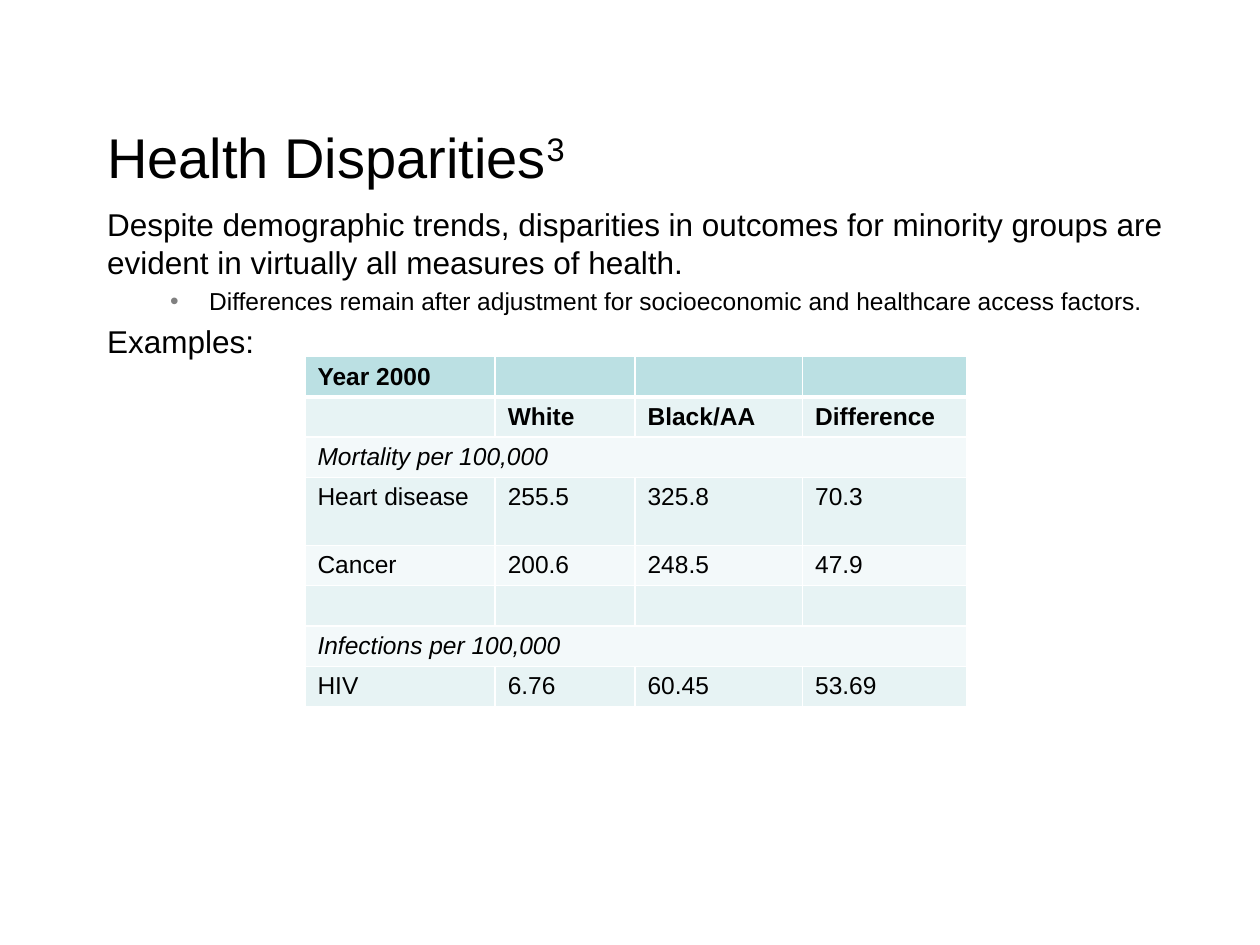
from lxml.etree import SubElement
from pptx import Presentation
from pptx.dml.color import RGBColor
from pptx.enum.text import MSO_ANCHOR as Anchor, PP_ALIGN as Align
from pptx.oxml.ns import qn
from pptx.util import Inches, Pt

BLACK = RGBColor(0x00, 0x00, 0x00)
GRAY = RGBColor(0x80, 0x80, 0x80)
WHITE = RGBColor(0xFF, 0xFF, 0xFF)
HEADER = RGBColor(0xBB, 0xE0, 0xE3)
BAND_DARK = RGBColor(0xE7, 0xF3, 0xF4)
BAND_LIGHT = RGBColor(0xF3, 0xF9, 0xFA)


def style(para, size, bold=False, italic=False):
    para.alignment = Align.LEFT
    para.font.name = "Arial"
    para.font.size = Pt(size)
    para.font.bold = bold
    para.font.italic = italic
    para.font.color.rgb = BLACK


def add_border(cell, side, width):
    line = SubElement(cell._tc.get_or_add_tcPr(), qn(f"a:ln{side}"), w=str(Pt(width)))
    fill = SubElement(line, qn("a:solidFill"))
    SubElement(fill, qn("a:srgbClr"), val=str(WHITE))


deck = Presentation()
deck.slide_width = Inches(10)
deck.slide_height = Inches(7.5)
page = deck.slides.add_slide(deck.slide_layouts[1])

title = page.shapes.title
title.left, title.top = Inches(0.75), Inches(0.92)
title.width, title.height = Inches(8.75), Inches(0.92)
title.text_frame.vertical_anchor = Anchor.TOP
heading = title.text_frame.paragraphs[0]
heading.add_run().text = "Health Disparities"
reference = heading.add_run()
reference.text = "3"
reference.font._element.set("baseline", "30000")
style(heading, 32)

body = page.placeholders[1]
body.left, body.top = Inches(0.75), Inches(1.58)
body.width, body.height = Inches(8.92), Inches(3.92)
statements = [
    ("Despite demographic trends, disparities in outcomes for minority groups "
     "are evident in virtually all measures of health.", 0, 18, 0, 0),
    ("Differences remain after adjustment for socioeconomic and healthcare "
     "access factors.", 1, 14, 0.81, -0.31),
    ("Examples:", 0, 18, 0.38, -0.38),
]
for index, (text, level, size, margin, indent) in enumerate(statements):
    frame = body.text_frame
    para = frame.add_paragraph() if index else frame.paragraphs[0]
    para.text = text
    para.level = level
    para.space_before = Pt(0.2 * size if index else 0)
    properties = para._p.get_or_add_pPr()
    properties.set("marL", str(Inches(margin)))
    properties.set("indent", str(Inches(indent)))
    if level:
        bullet_color = SubElement(properties, qn("a:buClr"))
        SubElement(bullet_color, qn("a:srgbClr"), val=str(GRAY))
        SubElement(properties, qn("a:buChar"), char="•")
    else:
        SubElement(properties, qn("a:buNone"))
    style(para, size)

rows = [
    ["Year 2000", "", "", ""],
    ["", "White", "Black/AA", "Difference"],
    ["Mortality per 100,000"],
    ["Heart disease", "255.5", "325.8", "70.3"],
    ["Cancer", "200.6", "248.5", "47.9"],
    ["", "", "", ""],
    ["Infections per 100,000"],
    ["HIV", "6.76", "60.45", "53.69"],
]
column_widths = [1.51, 1.11, 1.33, 1.3]
row_heights = [0.32, 0.32, 0.32, 0.54, 0.32, 0.32, 0.32, 0.32]
table = page.shapes.add_table(
    len(rows), len(column_widths),
    Inches(2.42), Inches(2.83), Inches(5.25), Inches(sum(row_heights)),
).table
for column, width in zip(table.columns, column_widths):
    column.width = Inches(width)
for row_index, (values, height) in enumerate(zip(rows, row_heights)):
    table.rows[row_index].height = Inches(height)
    is_section = len(values) == 1
    if is_section:
        table.cell(row_index, 0).merge(table.cell(row_index, 3))
    band = BAND_DARK if row_index % 2 else BAND_LIGHT
    for column_index in range(len(column_widths)):
        cell = table.cell(row_index, column_index)
        for side in "LRTB":
            header_edge = (row_index, side) in [(0, "B"), (1, "T")]
            add_border(cell, side, 3 if header_edge else 1)
        cell.fill.solid()
        cell.fill.fore_color.rgb = band if row_index else HEADER
        para = cell.text_frame.paragraphs[0]
        if column_index < len(values) and values[column_index]:
            para.text = values[column_index]
        style(para, 14, bold=row_index < 2, italic=is_section)

deck.save("out.pptx")
